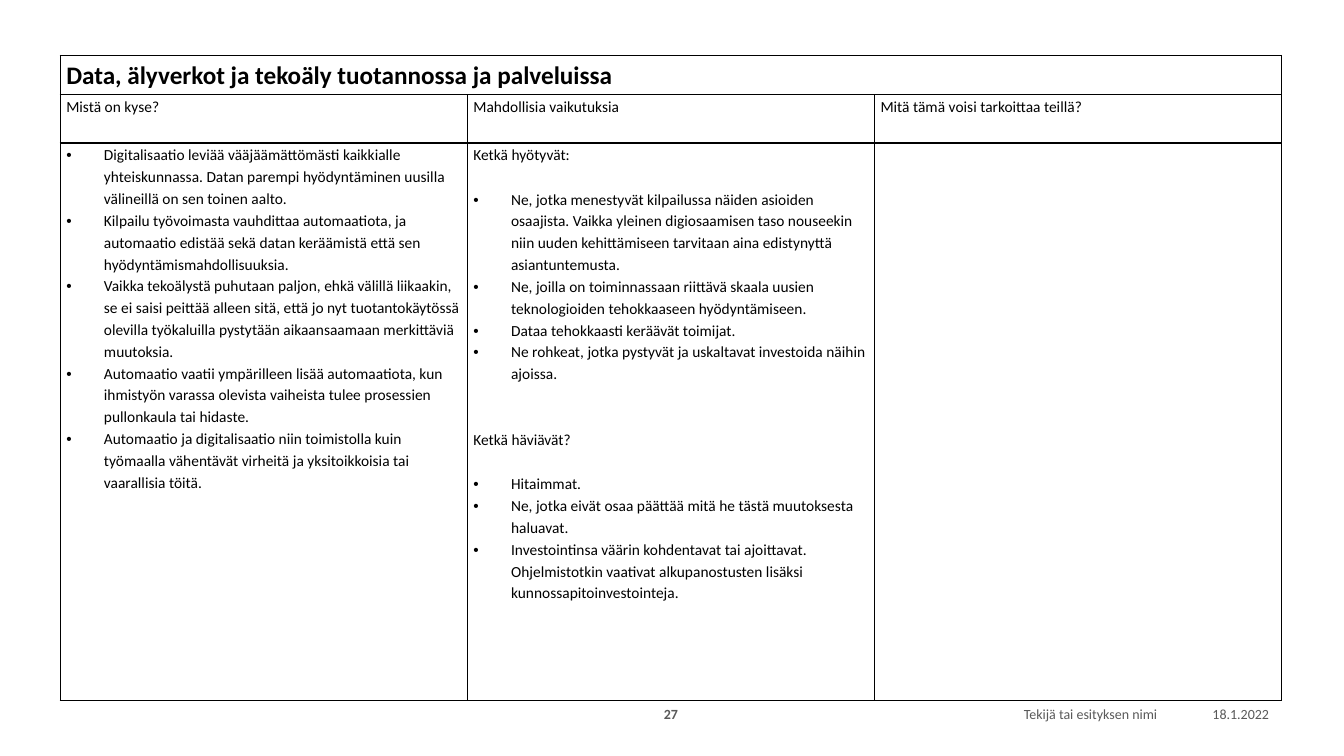
from lxml import etree
from pptx import Presentation
from pptx.dml.color import RGBColor
from pptx.enum import text
from pptx.oxml import ns
from pptx.util import Cm, Pt

BLACK = RGBColor(0x00, 0x00, 0x00)
GREY = RGBColor(0x59, 0x59, 0x59)
ALIGN = text.PP_ALIGN


def write(p, words, **fmt):
    font = p.add_run().font
    p.runs[0].text = words
    color = fmt.pop("color", BLACK)
    for name, value in {"name": "Calibri", "size": Pt(11), "bold": False, **fmt}.items():
        setattr(font, name, value)
    font.color.rgb = color


def add_border(cell, side, width):
    """Draw one side of a cell: L, R, T or B."""
    ln = etree.SubElement(cell._tc.get_or_add_tcPr(), ns.qn(f"a:ln{side}"), w=str(Pt(width)))
    fill = etree.SubElement(ln, ns.qn("a:solidFill"))
    etree.SubElement(fill, ns.qn("a:srgbClr"), val=str(BLACK))


prs = Presentation()
prs.slide_width, prs.slide_height = Cm(33.87), Cm(19.05)
s = prs.slides.add_slide(prs.slide_layouts[6])

# Footer: left, width, alignment, bold, words
FOOTER = [
    (29.41, 2.82, ALIGN.RIGHT, False, "18.1.2022"),
    (18.82, 10.59, ALIGN.RIGHT, False, "Tekijä tai esityksen nimi"),
    (16.15, 1.52, ALIGN.CENTER, True, "27"),
]
for left, width, align, bold, words in FOOTER:
    tf = s.shapes.add_textbox(Cm(left), Cm(17.65), Cm(width), Cm(0.69)).text_frame
    tf.word_wrap = True
    tf.vertical_anchor = text.MSO_ANCHOR.MIDDLE
    tf.paragraphs[0].alignment = align
    write(tf.paragraphs[0], words, size=Pt(10), bold=bold, color=GREY)

# Table
COL_WIDTH = 10.26
ROW_HEIGHTS = [0.99, 1.22, 14.05]
table = s.shapes.add_table(3, 3, Cm(1.52), Cm(1.4), Cm(3 * COL_WIDTH), Cm(sum(ROW_HEIGHTS))).table
table.first_row = table.horz_banding = False
for col in table.columns:
    col.width = Cm(COL_WIDTH)
for row, height in zip(table.rows, ROW_HEIGHTS):
    row.height = Cm(height)
    for cell in row.cells:
        cell.margin_left = cell.margin_right = Cm(0.15)
        cell.margin_top = cell.margin_bottom = 0
for r, row in enumerate(table.rows):
    for cell in row.cells:
        for side in "LRTB":
            under_heads = (r, side) in [(1, "B"), (2, "T")]
            add_border(cell, side, 1.5 if under_heads else 1)
        cell.fill.background()
table.cell(0, 0).merge(table.cell(0, 2))

title = table.cell(0, 0).text_frame.paragraphs[0]
title.line_spacing = 1.15
write(title, "Data, älyverkot ja tekoäly tuotannossa ja palveluissa", size=Pt(18), bold=True)

HEADS = ["Mistä on kyse?", "Mahdollisia vaikutuksia", "Mitä tämä voisi tarkoittaa teillä?"]
for c, head in enumerate(HEADS):
    p = table.cell(1, c).text_frame.paragraphs[0]
    p.line_spacing = 1.15
    write(p, head)

# Each column: (subheading, bullets) groups
COLUMNS = [
    [(None, [
        "Digitalisaatio leviää vääjäämättömästi kaikkialle yhteiskunnassa. Datan parempi hyödyntäminen uusilla välineillä on sen toinen aalto.",
        "Kilpailu työvoimasta vauhdittaa automaatiota, ja automaatio edistää sekä datan keräämistä että sen hyödyntämismahdollisuuksia.",
        "Vaikka tekoälystä puhutaan paljon, ehkä välillä liikaakin, se ei saisi peittää alleen sitä, että jo nyt tuotantokäytössä olevilla työkaluilla pystytään aikaansaamaan merkittäviä muutoksia.",
        "Automaatio vaatii ympärilleen lisää automaatiota, kun ihmistyön varassa olevista vaiheista tulee prosessien pullonkaula tai hidaste.",
        "Automaatio ja digitalisaatio niin toimistolla kuin työmaalla vähentävät virheitä ja yksitoikkoisia tai vaarallisia töitä.",
    ])],
    [("Ketkä hyötyvät:", [
        "Ne, jotka menestyvät kilpailussa näiden asioiden osaajista. Vaikka yleinen digiosaamisen taso nouseekin niin uuden kehittämiseen tarvitaan aina edistynyttä asiantuntemusta.",
        "Ne, joilla on toiminnassaan riittävä skaala uusien teknologioiden tehokkaaseen hyödyntämiseen.",
        "Dataa tehokkaasti keräävät toimijat.",
        "Ne rohkeat, jotka pystyvät ja uskaltavat investoida näihin ajoissa.",
    ]), ("Ketkä häviävät?", [
        "Hitaimmat.",
        "Ne, jotka eivät osaa päättää mitä he tästä muutoksesta haluavat.",
        "Investointinsa väärin kohdentavat tai ajoittavat. Ohjelmistotkin vaativat alkupanostusten lisäksi kunnossapitoinvestointeja.",
    ])],
]
for c, groups in enumerate(COLUMNS):
    tf = table.cell(2, c).text_frame
    p = tf.paragraphs[0]
    for g, (subheading, bullets) in enumerate(groups):
        if subheading:
            if g:
                p = tf.add_paragraph()
                p.space_before = Pt(31.5)
            p.line_spacing = 1.15
            p.space_after = Pt(16)
            write(p, subheading)
        for bullet in bullets:
            if p.runs:
                p = tf.add_paragraph()
            pPr = p._p.get_or_add_pPr()
            pPr.set("marL", str(Cm(0.95)))
            pPr.set("indent", str(-Cm(0.95)))
            etree.SubElement(pPr, ns.qn("a:buFont"), typeface="Arial")
            etree.SubElement(pPr, ns.qn("a:buChar"), char="•")
            p.line_spacing = 1.15
            write(p, bullet)

prs.save("out.pptx")
